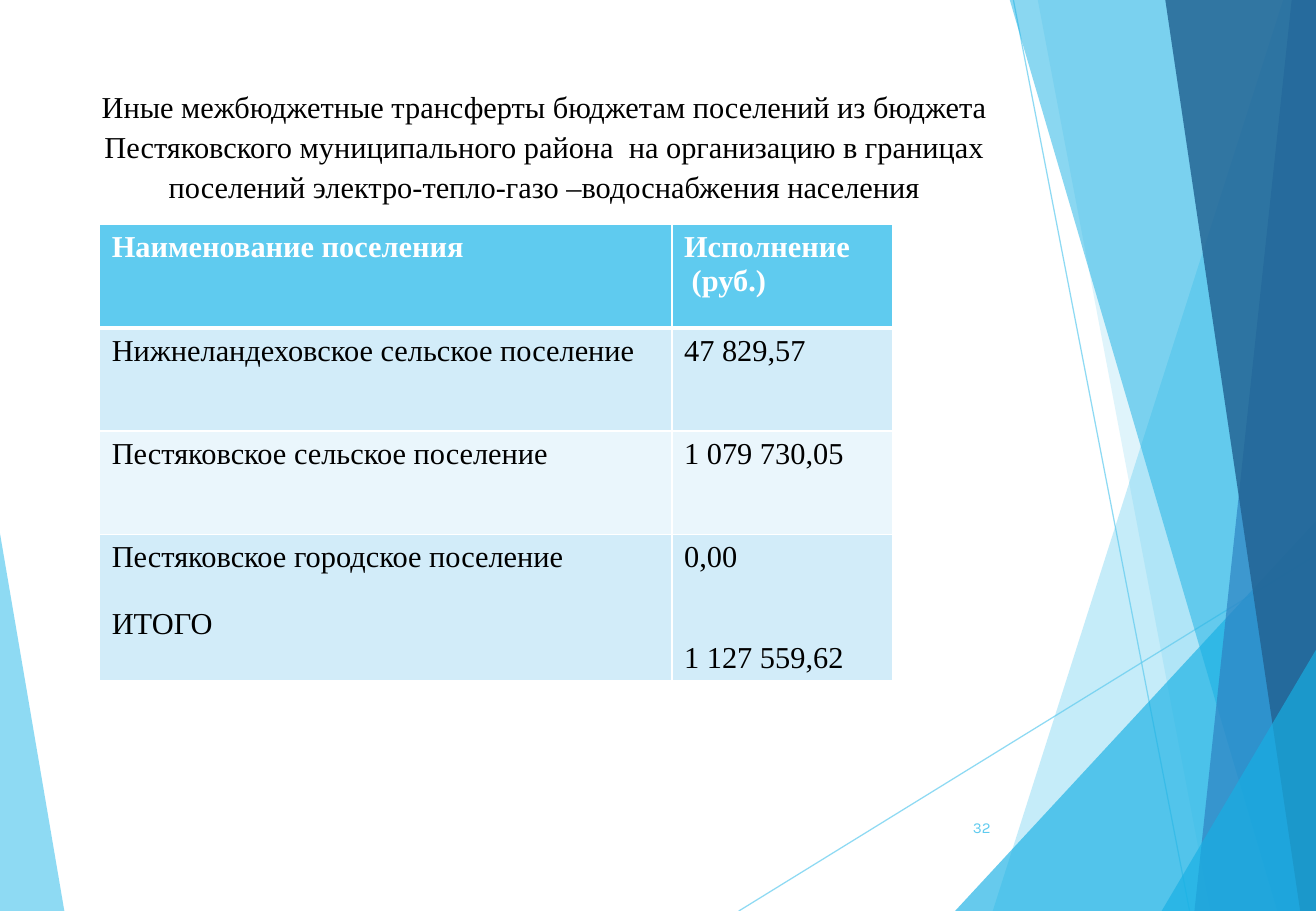
from lxml import etree
from pptx import Presentation
from pptx.dml.color import RGBColor
from pptx.enum import shapes, text
from pptx.oxml import ns
from pptx.util import Inches, Pt

SKY = RGBColor(0x5F, 0xCB, 0xEF)
AZURE = RGBColor(0x17, 0xB0, 0xE4)
BLUE = RGBColor(0x2E, 0x83, 0xC3)
NAVY = RGBColor(0x22, 0x62, 0x92)
BAND_DARK = RGBColor(0xD2, 0xEC, 0xF9)
BAND_LIGHT = RGBColor(0xEA, 0xF6, 0xFC)
WHITE = RGBColor(0xFF, 0xFF, 0xFF)
BLACK = RGBColor(0, 0, 0)
SERIF = "Times New Roman"

# Content
HEADING = ("Иные межбюджетные трансферты бюджетам поселений из бюджета "
           "Пестяковского муниципального района  на организацию в границах "
           "поселений электро-тепло-газо –водоснабжения населения")
PAGE_NUMBER = "32"
# Each cell is a list of (paragraph, blank lines before it)
TRANSFERS = [
    ([("Наименование поселения", 0)], [("Исполнение", 0), (" (руб.)", 0)]),
    ([("Нижнеландеховское сельское поселение", 0)], [("47 829,57", 0)]),
    ([("Пестяковское сельское поселение", 0)], [("1 079 730,05", 0)]),
    ([("Пестяковское городское поселение", 0), ("ИТОГО", 1)],
     [("0,00", 0), ("1 127 559,62", 2)]),
]
COLUMN_WIDTHS = [4.71, 1.82]
ROW_HEIGHTS = [0.85, 0.85, 0.85, 1.2]
LINE_HEIGHT = 19.9  # points, one line of 18 pt text

# Decoration, back to front
W, H = 10.83, 7.5
RAYS = [((6.08, H), (W, 4.57)), ((8.34, 0), (9.79, H))]
FACETS = [  # corners, colour, opacity in percent
    ([(0, 4.39), (0.53, H), (0, H)], SKY, 70),
    ([(10.56, 0), (8.17, H), (W, H), (W, 0)], SKY, 36),
    ([(8.54, 0), (9.96, H), (W, H), (W, 0)], SKY, 20),
    ([(7.86, H), (W, 4.29), (W, H)], AZURE, 66),
    ([(8.31, 0), (10.51, H), (W, H), (W, 0)], AZURE, 50),
    ([(10.63, 0), (9.83, H), (W, H), (W, 0)], BLUE, 70),
    ([(9.59, 0), (10.7, H), (W, H), (W, 0)], NAVY, 82),
    ([(9.56, H), (W, 5.35), (W, H)], AZURE, 66),
]


def set_opacity(part, percent):
    for colour in part._element.spPr.iter(ns.qn("a:srgbClr")):
        etree.SubElement(colour, ns.qn("a:alpha"), val=str(percent * 1000))


def set_font(paragraph, name, size, colour, bold=False):
    font = paragraph.font
    font.name, font.size, font.bold = name, Pt(size), bold
    font.color.rgb = colour


def set_border(cell, side, points):
    line = etree.SubElement(cell._tc.get_or_add_tcPr(), ns.qn("a:ln" + side),
                            w=str(Pt(points)))
    fill = etree.SubElement(line, ns.qn("a:solidFill"))
    etree.SubElement(fill, ns.qn("a:srgbClr"), val=str(WHITE))


def add_ray(slide, start, end):
    ray = slide.shapes.add_connector(shapes.MSO_CONNECTOR.STRAIGHT,
                                     *map(Inches, start + end))
    ray.line.color.rgb = SKY
    ray.line.width = Pt(0.75)
    set_opacity(ray, 70)
    etree.SubElement(ray._element.spPr, ns.qn("a:effectLst"))


def add_facet(slide, corners, colour, opacity):
    points = [(Inches(x), Inches(y)) for x, y in corners]
    builder = slide.shapes.build_freeform(*points[0])
    builder.add_line_segments(points[1:], close=True)
    facet = builder.convert_to_shape()
    facet.fill.solid()
    facet.fill.fore_color.rgb = colour
    facet.line.fill.background()
    facet.shadow.inherit = False
    set_opacity(facet, opacity)


def add_heading(slide):
    heading = slide.shapes.title
    heading.left, heading.top = Inches(0.72), Inches(0.65)
    heading.width, heading.height = Inches(7.52), Inches(1.2)
    frame = heading.text_frame
    frame.text = HEADING
    frame.word_wrap = True
    frame.auto_size = text.MSO_AUTO_SIZE.NONE
    frame.vertical_anchor = text.MSO_ANCHOR.TOP
    paragraph = frame.paragraphs[0]
    paragraph.alignment = text.PP_ALIGN.CENTER
    paragraph.line_spacing = 1.09
    set_font(paragraph, SERIF, 18, BLACK)


def fill_cell(cell, row, entries):
    header = row == 0
    for side, points in (("L", 1), ("R", 1), ("T", 3 if row == 1 else 1),
                         ("B", 3 if header else 1)):
        set_border(cell, side, points)
    cell.fill.solid()
    cell.fill.fore_color.rgb = SKY if header else (BAND_LIGHT, BAND_DARK)[row % 2]
    frame = cell.text_frame
    for i, (wording, blank_lines) in enumerate(entries):
        paragraph = frame.add_paragraph() if i else frame.paragraphs[0]
        paragraph.text = wording
        if blank_lines:
            paragraph.space_before = Pt(blank_lines * LINE_HEIGHT)
        set_font(paragraph, SERIF, 18, WHITE if header else BLACK, header)


def add_transfers(slide):
    table = slide.shapes.add_table(
        len(TRANSFERS), len(COLUMN_WIDTHS), Inches(0.82), Inches(1.85),
        Inches(sum(COLUMN_WIDTHS)), Inches(sum(ROW_HEIGHTS))).table
    for column, width in zip(table.columns, COLUMN_WIDTHS):
        column.width = Inches(width)
    for r, (height, cells) in enumerate(zip(ROW_HEIGHTS, TRANSFERS)):
        table.rows[r].height = Inches(height)
        for c, entries in enumerate(cells):
            fill_cell(table.cell(r, c), r, entries)


def add_page_number(slide):
    frame = slide.shapes.add_textbox(Inches(7.64), Inches(6.61),
                                     Inches(0.61), Inches(0.4)).text_frame
    frame.word_wrap = True
    frame.vertical_anchor = text.MSO_ANCHOR.MIDDLE
    paragraph = frame.paragraphs[0]
    paragraph.text = PAGE_NUMBER
    paragraph.alignment = text.PP_ALIGN.RIGHT
    set_font(paragraph, "Karla", 9, SKY)


def main():
    deck = Presentation()
    deck.slide_width, deck.slide_height = Inches(W), Inches(H)
    slide = deck.slides.add_slide(deck.slide_layouts[5])
    for ray in RAYS:
        add_ray(slide, *ray)
    for facet in FACETS:
        add_facet(slide, *facet)
    add_heading(slide)
    add_transfers(slide)
    add_page_number(slide)
    deck.save("out.pptx")


if __name__ == "__main__":
    main()
